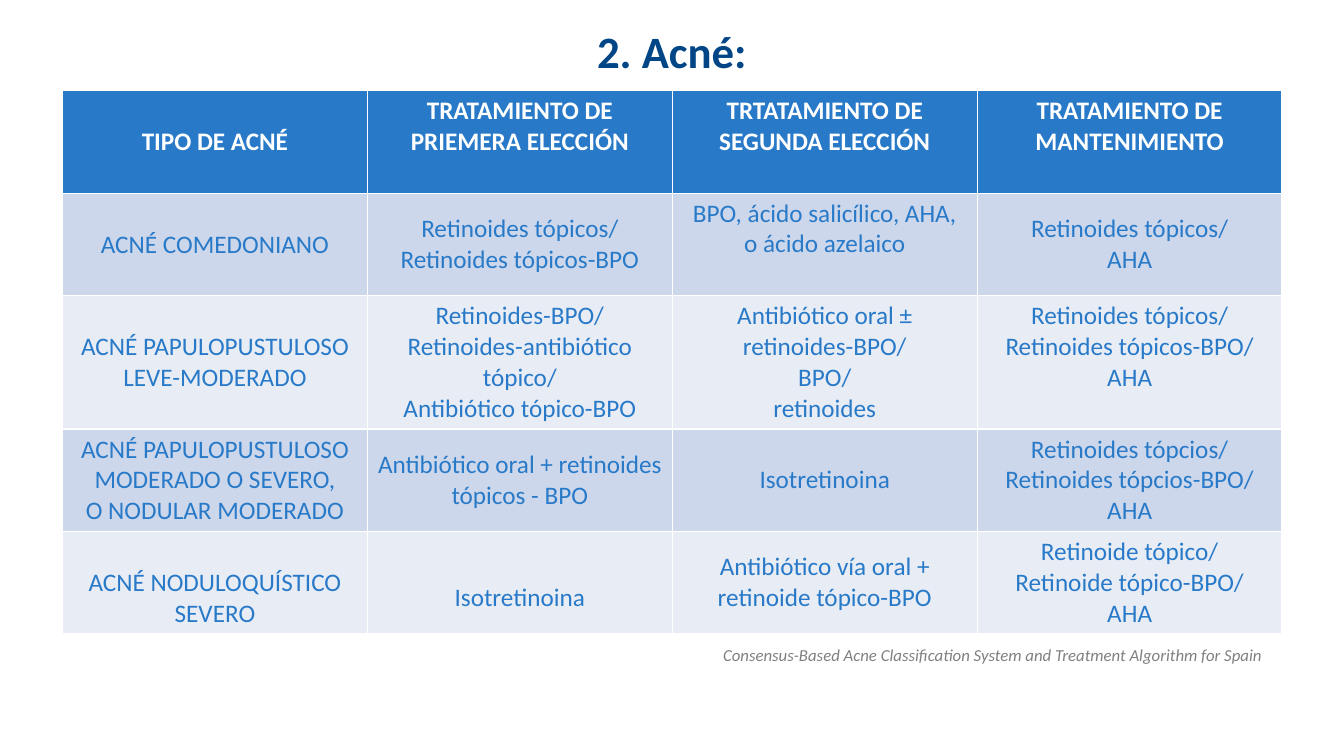
from dataclasses import dataclass

from pptx import Presentation
from pptx.dml.color import RGBColor
from pptx.enum import text as t
from pptx.oxml.ns import qn
from pptx.util import Pt

FONT = "Calibri"
BLUE, WHITE = "287AC8", "FFFFFF"
BANDS = ("CDD7EB", "E8ECF5")
TOP, MIDDLE, BOTTOM = t.MSO_ANCHOR.TOP, t.MSO_ANCHOR.MIDDLE, t.MSO_ANCHOR.BOTTOM
CENTER, RIGHT = t.PP_ALIGN.CENTER, t.PP_ALIGN.RIGHT
ROW_HEIGHTS = (73.2, 73.2, 95.2, 73.2, 73.2)


@dataclass
class Entry:
    lines: list[str]
    anchor: t.MSO_ANCHOR = MIDDLE
    margin_top: float = 3.6


@dataclass
class Style:
    size: float
    color: str
    bold: bool = False
    italic: bool = False
    align: t.PP_ALIGN = CENTER


ROWS = [
    [
        Entry(["TIPO DE ACNÉ"]),
        Entry(["TRATAMIENTO DE", "PRIEMERA ELECCIÓN"], TOP),
        Entry(["TRTATAMIENTO DE", "SEGUNDA ELECCIÓN"], TOP),
        Entry(["TRATAMIENTO DE", "MANTENIMIENTO"], TOP),
    ],
    [
        Entry(["ACNÉ COMEDONIANO"]),
        Entry(["Retinoides tópicos/", "Retinoides tópicos-BPO"]),
        Entry(["BPO, ácido salicílico, AHA,", "o ácido azelaico"], TOP),
        Entry(["Retinoides tópicos/", "AHA"]),
    ],
    [
        Entry(["ACNÉ PAPULOPUSTULOSO LEVE-MODERADO"]),
        Entry(["Retinoides-BPO/", "Retinoides-antibiótico tópico/", "Antibiótico tópico-BPO"]),
        Entry(["Antibiótico oral ± retinoides-BPO/", "BPO/", "retinoides"]),
        Entry(["Retinoides tópicos/", "Retinoides tópicos-BPO/", "AHA"], TOP),
    ],
    [
        Entry(["ACNÉ PAPULOPUSTULOSO MODERADO O SEVERO,", "O NODULAR MODERADO"]),
        Entry(["Antibiótico oral + retinoides tópicos - BPO"]),
        Entry(["Isotretinoina"]),
        Entry(["Retinoides tópcios/", "Retinoides tópcios-BPO/", "AHA"]),
    ],
    [
        Entry(["ACNÉ NODULOQUÍSTICO SEVERO"], BOTTOM),
        Entry(["Isotretinoina"], margin_top=25.6),
        Entry(["Antibiótico vía oral + retinoide tópico-BPO"]),
        Entry(["Retinoide tópico/", "Retinoide tópico-BPO/", "AHA"]),
    ],
]


def rgb(color: str) -> RGBColor:
    return RGBColor.from_string(color)


def write(frame, lines: list[str], style: Style) -> None:
    for index, line in enumerate(lines):
        paragraph = frame.add_paragraph() if index else frame.paragraphs[0]
        paragraph.alignment = style.align
        paragraph.space_before = Pt(0)
        run = paragraph.add_run()
        run.text = line
        run.font.name, run.font.size = FONT, Pt(style.size)
        run.font.bold, run.font.italic = style.bold, style.italic
        run.font.color.rgb = rgb(style.color)


def place(shape, left: float, top: float, width: float, height: float) -> None:
    shape.left, shape.top = Pt(left), Pt(top)
    shape.width, shape.height = Pt(width), Pt(height)
    shape.text_frame.word_wrap = True
    shape.text_frame.auto_size = t.MSO_AUTO_SIZE.NONE


def fill_cell(cell, entry: Entry, color: str, style: Style) -> None:
    cell.fill.solid()
    cell.fill.fore_color.rgb = rgb(color)
    cell.vertical_anchor = entry.anchor
    cell.margin_top = Pt(entry.margin_top)
    write(cell.text_frame, entry.lines, style)


def main() -> None:
    presentation = Presentation()
    presentation.slide_width, presentation.slide_height = Pt(960), Pt(540)
    slide = presentation.slides.add_slide(presentation.slide_layouts[1])

    # Title
    title = slide.shapes.title
    place(title, 48, 12.24, 864, 47.52)
    title.text_frame.vertical_anchor = MIDDLE
    write(title.text_frame, ["2. Acné:"], Style(32, "004586", bold=True))

    # Reference line
    reference = slide.placeholders[1]
    place(reference, 0, 457.2, 909, 23.04)
    reference.text_frame.vertical_anchor = TOP
    properties = reference.text_frame.paragraphs[0]._p.get_or_add_pPr()
    properties.set("marL", "0")
    properties.set("indent", "0")
    properties.append(properties.makeelement(qn("a:buNone"), {}))
    write(
        reference.text_frame,
        ["Consensus-Based Acne Classification System and Treatment Algorithm for Spain"],
        Style(12, "808080", italic=True, align=RIGHT),
    )

    # Treatment table
    table = slide.shapes.add_table(
        len(ROWS), len(ROWS[0]), Pt(44.64), Pt(64.8), Pt(871.2), Pt(sum(ROW_HEIGHTS))
    ).table
    for row_index, (entries, height) in enumerate(zip(ROWS, ROW_HEIGHTS)):
        table.rows[row_index].height = Pt(height)
        header = row_index == 0
        color = BLUE if header else BANDS[(row_index - 1) % 2]
        style = Style(18, WHITE if header else BLUE, bold=header)
        for column_index, entry in enumerate(entries):
            fill_cell(table.cell(row_index, column_index), entry, color, style)

    presentation.save("out.pptx")


if __name__ == "__main__":
    main()
